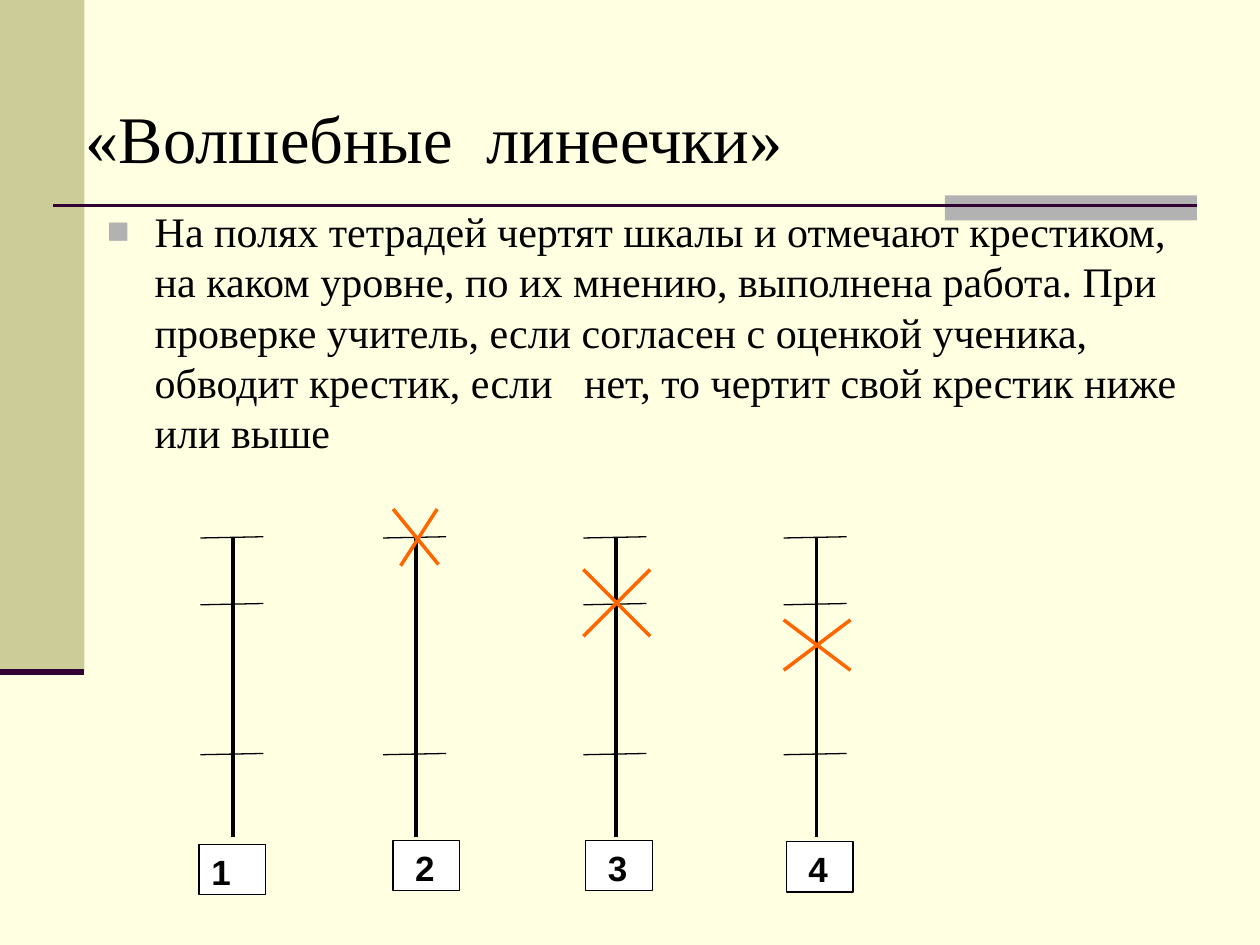
from dataclasses import dataclass

from lxml import etree
from pptx import Presentation
from pptx.dml.color import RGBColor
from pptx.enum.shapes import MSO_CONNECTOR, MSO_SHAPE
from pptx.enum.text import MSO_ANCHOR, PP_ALIGN
from pptx.oxml.ns import qn
from pptx.util import Inches, Pt

STRAIGHT = MSO_CONNECTOR.STRAIGHT
RECTANGLE = MSO_SHAPE.RECTANGLE
TOP = MSO_ANCHOR.TOP
LEFT = PP_ALIGN.LEFT
TITLE_ONLY = 5


@dataclass(frozen=True)
class Theme:
    background: str = "FFFFE1"
    band: str = "CCCC99"
    grey: str = "B2B2B2"
    rule: str = "330033"
    ink: str = "000000"
    cross: str = "FF6600"
    paper: str = "FFFFFF"
    serif: str = "Times New Roman"
    sans: str = "Arial"
    title_size: int = 38
    body_size: int = 24
    label_size: int = 20


THEME = Theme()

TITLE = "«Волшебные  линеечки»"
BODY = (
    "На полях тетрадей чертят шкалы и отмечают крестиком, на каком уровне, "
    "по их мнению, выполнена работа. При проверке учитель, если согласен с "
    "оценкой ученика, обводит крестик, если   нет, то чертит свой крестик "
    "ниже или выше"
)

# Scales: left end of the ticks, heights of the ticks, label text and place
TOP_TICK, MIDDLE_TICK, LOW_TICK = 4.27, 4.8, 5.99
SCALES = [
    (1.59, (TOP_TICK, MIDDLE_TICK, LOW_TICK), "1", 1.58, 6.7),
    (3.04, (TOP_TICK, LOW_TICK), " 2", 3.12, 6.67),
    (4.63, (TOP_TICK, MIDDLE_TICK, LOW_TICK), " 3", 4.65, 6.67),
    (6.22, (TOP_TICK, MIDDLE_TICK, LOW_TICK), " 4", 6.24, 6.68),
]
# Crosses: the two strokes, each as x1, y1, x2, y2
CROSSES = [
    ((3.47, 4.04, 3.18, 4.49), (3.12, 4.04, 3.48, 4.48)),
    ((4.63, 4.52, 5.16, 5.05), (5.16, 4.52, 4.63, 5.05)),
    ((6.22, 4.92, 6.75, 5.32), (6.75, 4.92, 6.22, 5.32)),
]


def rgb(value):
    return RGBColor.from_string(value)


def add_line(slide, x1, y1, x2, y2, color, width):
    line = slide.shapes.add_connector(
        STRAIGHT, Inches(x1), Inches(y1), Inches(x2), Inches(y2))
    line.line.color.rgb = rgb(color)
    line.line.width = Pt(width)
    etree.SubElement(line._element.spPr, qn("a:effectLst"))


def add_box(slide, left, top, width, height, fill, outline=None):
    box = slide.shapes.add_shape(
        RECTANGLE, Inches(left), Inches(top), Inches(width), Inches(height))
    box.shadow.inherit = False
    box.fill.solid()
    box.fill.fore_color.rgb = rgb(fill)
    if outline:
        box.line.color.rgb = rgb(outline)
        box.line.width = Pt(0.75)
    else:
        box.line.fill.background()
    return box


def add_text(paragraph, text, font, size, bold=False):
    run = paragraph.add_run()
    run.text = text
    run.font.name = font
    run.font.size = Pt(size)
    run.font.bold = bold
    run.font.color.rgb = rgb(THEME.ink)
    paragraph.alignment = LEFT


def add_bullet(paragraph, indent):
    props = paragraph._p.get_or_add_pPr()
    props.set("marL", str(Inches(indent)))
    props.set("indent", str(-Inches(indent)))
    color = etree.SubElement(props, qn("a:buClr"))
    etree.SubElement(color, qn("a:srgbClr"), val=THEME.grey)
    etree.SubElement(props, qn("a:buSzPct"), val="90000")
    etree.SubElement(props, qn("a:buFont"), typeface=THEME.sans)
    etree.SubElement(props, qn("a:buChar"), char="■")


def add_decoration(slide):
    add_box(slide, 0, 0, 0.67, 5.33, THEME.band)
    add_box(slide, 7.5, 1.55, 2, 0.2, THEME.grey)
    add_line(slide, 0.42, 1.63, 9.5, 1.63, THEME.rule, 1.5)
    add_line(slide, 0, 5.33, 0.67, 5.33, THEME.rule, 3.5)


def fill_title(slide):
    title = slide.shapes.title
    title.left, title.top = Inches(0.58), Inches(0.77)
    title.width, title.height = Inches(8.67), Inches(1.26)
    frame = title.text_frame
    frame.vertical_anchor = TOP
    frame.margin_top = 0
    add_text(frame.paragraphs[0], TITLE, THEME.serif, THEME.title_size)


def add_body(slide):
    body = slide.shapes.add_textbox(
        Inches(0.75), Inches(1.58), Inches(8.83), Inches(4.95))
    body.text_frame.word_wrap = True
    paragraph = body.text_frame.paragraphs[0]
    paragraph.space_before = Pt(0.2 * THEME.body_size)
    add_bullet(paragraph, 0.38)
    add_text(paragraph, BODY, THEME.serif, THEME.body_size)


def add_scale(slide, left, ticks, label, label_left, label_top):
    axis = left + 0.26
    add_line(slide, axis, 4.26, axis, 6.64, THEME.ink, 2)
    for height in ticks:
        add_line(slide, left, height, left + 0.5, height - 0.01, THEME.ink, 0.75)
    box = add_box(slide, label_left, label_top, 0.53, 0.4, THEME.paper, THEME.ink)
    box.text_frame.vertical_anchor = TOP
    add_text(box.text_frame.paragraphs[0], label, THEME.sans,
             THEME.label_size, bold=True)


def main():
    prs = Presentation()
    prs.slide_width, prs.slide_height = Inches(10), Inches(7.5)
    slide = prs.slides.add_slide(prs.slide_layouts[TITLE_ONLY])
    slide.background.fill.solid()
    slide.background.fill.fore_color.rgb = rgb(THEME.background)

    # Side band and rules
    add_decoration(slide)

    # Title and explanation
    fill_title(slide)
    add_body(slide)

    # Numbered scales with the pupils' crosses
    for scale in SCALES:
        add_scale(slide, *scale)
    for strokes in CROSSES:
        for stroke in strokes:
            add_line(slide, *stroke, THEME.cross, 2)

    prs.save("out.pptx")


if __name__ == "__main__":
    main()
